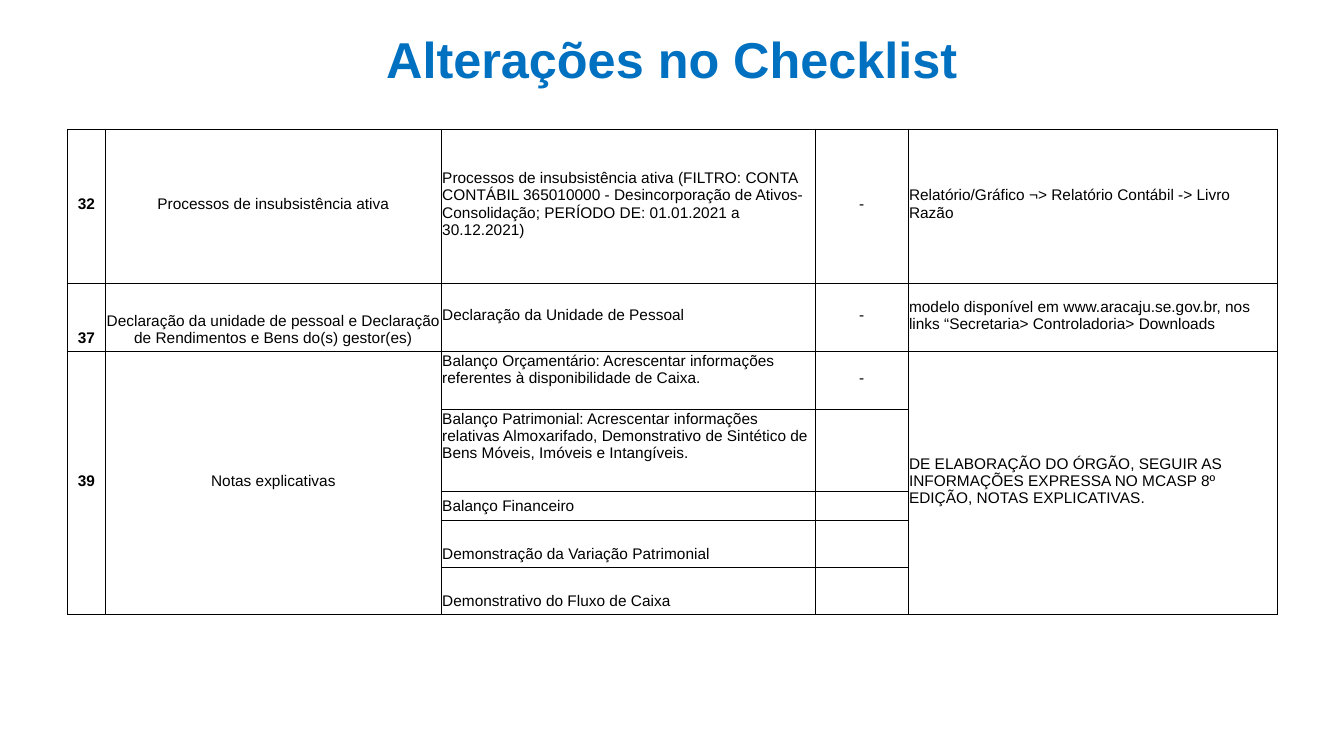
"""Build the slide of checklist changes: a heading over a bordered table."""
from pptx import Presentation, util as u
from pptx.dml.color import RGBColor
from pptx.enum import text
from pptx.oxml import parse_xml
from pptx.oxml.ns import nsdecls

HEADING = "Alterações no Checklist"
CHECKLIST = [
    ("32", "Processos de insubsistência ativa",
     "Processos de insubsistência ativa (FILTRO: CONTA CONTÁBIL 365010000 - Desincorporação de Ativos- "
     "Consolidação; PERÍODO DE: 01.01.2021 a 30.12.2021)",
     "-", "Relatório/Gráfico ¬> Relatório Contábil -> Livro Razão"),
    ("37", "Declaração da unidade de pessoal e Declaração de Rendimentos e Bens do(s) gestor(es)",
     "Declaração da Unidade de Pessoal",
     "-", "modelo disponível em www.aracaju.se.gov.br, nos links “Secretaria> Controladoria> Downloads"),
    ("39", "Notas explicativas",
     "Balanço Orçamentário: Acrescentar informações referentes à disponibilidade de Caixa.",
     "-", "DE ELABORAÇÃO DO ÓRGÃO, SEGUIR AS INFORMAÇÕES EXPRESSA NO MCASP 8º EDIÇÃO, NOTAS EXPLICATIVAS."),
    ("", "", "Balanço Patrimonial: Acrescentar informações relativas Almoxarifado, "
     "Demonstrativo de Sintético de Bens Móveis, Imóveis e Intangíveis.", "", ""),
    ("", "", "Balanço Financeiro", "", ""),
    ("", "", "Demonstração da Variação Patrimonial", "", ""),
    ("", "", "Demonstrativo do Fluxo de Caixa", "", ""),
]
COLUMNS = (0.38, 3.33, 3.71, 0.92, 3.66)
ROWS = (1.53, 0.68, 0.57, 0.81, 0.29, 0.47, 0.47)
CENTRED = (0, 1, 3)
MERGED = (0, 1, 4)
NOTES_ROW = 2
TOP, MIDDLE, BOTTOM = text.MSO_ANCHOR.TOP, text.MSO_ANCHOR.MIDDLE, text.MSO_ANCHOR.BOTTOM
ANCHORS = {(1, 0): BOTTOM, (1, 1): BOTTOM, (2, 2): TOP, (3, 2): TOP,
           (4, 2): BOTTOM, (5, 2): BOTTOM, (6, 2): BOTTOM}
THEME = {
    "heading": {"name": "Arial", "size": u.Pt(36), "bold": True, "color": "0070C0"},
    "number": {"name": "Arial", "size": u.Pt(11), "bold": True, "color": "000000"},
    "body": {"name": "Arial", "size": u.Pt(11), "bold": False, "color": "000000"},
    "border": ("000000", u.Pt(0.5)),
}
CELL_MARGINS = {"margin_left": 0.01, "margin_right": 0.01, "margin_top": 0.01, "margin_bottom": 0.05}
HEADING_MARGINS = {"margin_left": 0, "margin_right": 0, "margin_top": 0.1, "margin_bottom": 0}
SIDE = 0.05


def set_margins(holder, margins):
    for side, inches in margins.items():
        setattr(holder, side, u.Inches(inches))


def write(paragraph, words, style, centred):
    paragraph.alignment = text.PP_ALIGN.CENTER if centred else text.PP_ALIGN.LEFT
    if not words:
        size = int(style["size"].pt * 100)
        paragraph._p.append(parse_xml(f'<a:endParaRPr {nsdecls("a")} sz="{size}"/>'))
        return
    run = paragraph.add_run()
    run.text = words
    for field, value in style.items():
        if field == "color":
            run.font.color.rgb = RGBColor.from_string(value)
        else:
            setattr(run.font, field, value)


def draw_borders(cell):
    color, width = THEME["border"]
    for position, edge in enumerate(("lnL", "lnR", "lnT", "lnB")):
        cell._tc.get_or_add_tcPr().insert(position, parse_xml(
            f'<a:{edge} {nsdecls("a")} w="{width}"><a:solidFill><a:srgbClr val="{color}"/>'
            f'</a:solidFill></a:{edge}>'))


def add_heading(slide, left, width):
    frame = slide.shapes.add_textbox(left, u.Inches(0.21), width, u.Inches(0.64)).text_frame
    frame.word_wrap = True
    frame.vertical_anchor = MIDDLE
    set_margins(frame, HEADING_MARGINS)
    write(frame.paragraphs[0], HEADING, THEME["heading"], True)


def add_checklist(slide, left, width):
    checklist = slide.shapes.add_table(
        len(ROWS), len(COLUMNS), left, u.Inches(1.28), width, u.Inches(sum(ROWS))).table
    checklist.first_row = checklist.horz_banding = False
    for column, inches in zip(checklist.columns, COLUMNS):
        column.width = u.Inches(inches)
    for row, inches in zip(checklist.rows, ROWS):
        row.height = u.Inches(inches)
    for r, entry in enumerate(CHECKLIST):
        for c, words in enumerate(entry):
            cell = checklist.cell(r, c)
            cell.fill.background()
            cell.vertical_anchor = ANCHORS.get((r, c), MIDDLE)
            set_margins(cell, CELL_MARGINS)
            draw_borders(cell)
            style = THEME["body" if c else "number"]
            write(cell.text_frame.paragraphs[0], words, style, c in CENTRED)
    for c in MERGED:
        checklist.cell(NOTES_ROW, c).merge(checklist.cell(len(ROWS) - 1, c))


def main():
    deck = Presentation()
    deck.slide_width, deck.slide_height = u.Inches(13.33), u.Inches(7.5)
    slide = deck.slides.add_slide(deck.slide_layouts[6])
    left = int(deck.slide_width * SIDE)
    width = deck.slide_width - 2 * left
    add_heading(slide, left, width)
    add_checklist(slide, left, width)
    deck.save("out.pptx")


if __name__ == "__main__":
    main()
